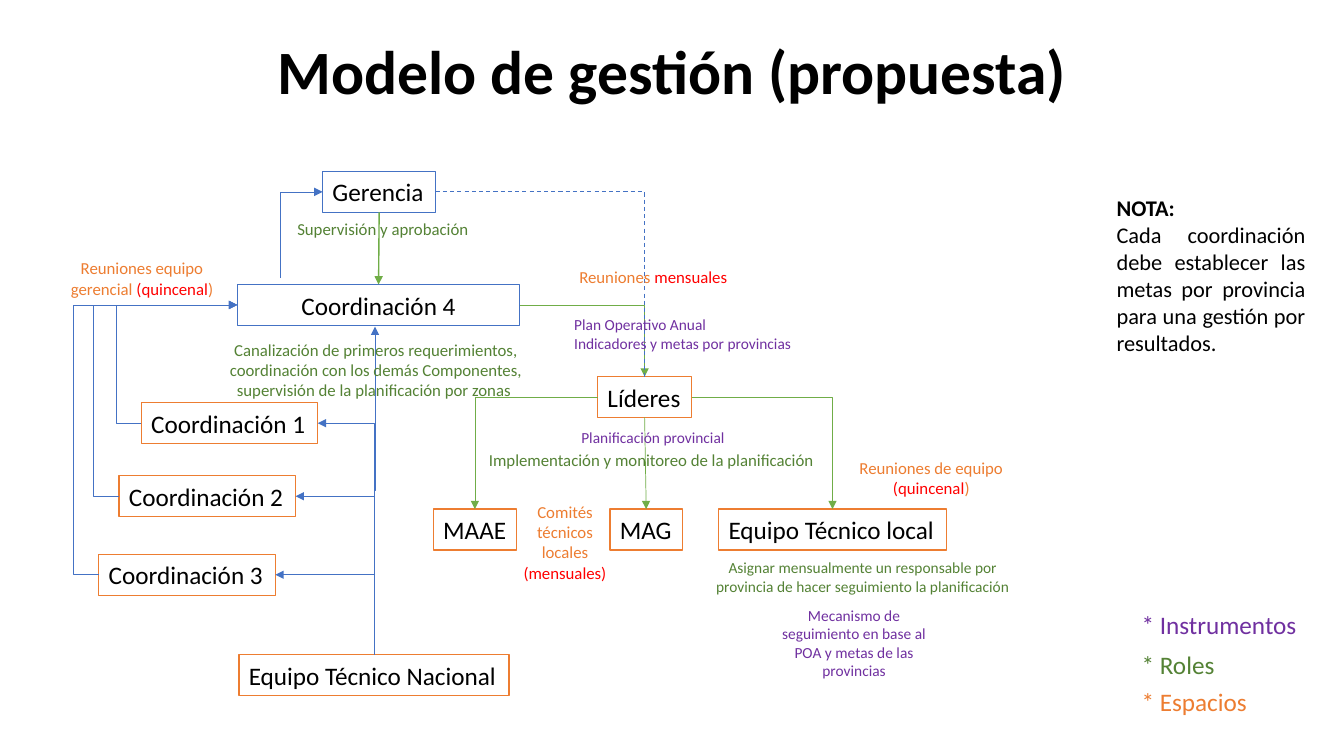
from dataclasses import dataclass

from lxml.etree import SubElement
from pptx import Presentation
from pptx.dml.color import RGBColor
from pptx.enum.dml import MSO_LINE
from pptx.enum.shapes import MSO_CONNECTOR, MSO_SHAPE
from pptx.enum.text import MSO_ANCHOR, MSO_AUTO_SIZE, PP_ALIGN
from pptx.oxml.ns import qn
from pptx.slide import Slide
from pptx.util import Cm, Pt


@dataclass(frozen=True)
class Theme:
    font: str = "Calibri"
    ink: str = "000000"
    paper: str = "FFFFFF"
    blue: str = "4472C4"
    orange: str = "ED7D31"
    arrow_green: str = "70AD47"
    instruments: str = "7030A0"
    roles: str = "548235"
    spaces: str = "ED7D31"
    frequency: str = "FF0000"
    title: int = 44
    heading: int = 18
    note: int = 16
    label: int = 12
    small: int = 11


def left_of(box):
    return box.left, box.top + box.height // 2


def right_of(box):
    return box.left + box.width, box.top + box.height // 2


def top_of(box):
    return box.left + box.width // 2, box.top


def bottom_of(box):
    return box.left + box.width // 2, box.top + box.height


@dataclass
class ModelSlide:
    slide: Slide
    theme: Theme

    def fill_text(self, frame, paragraphs, size, align, wrap, bold=False):
        """Each paragraph is a list of (text, colour) runs."""
        frame.word_wrap = wrap
        frame.auto_size = MSO_AUTO_SIZE.SHAPE_TO_FIT_TEXT
        for index, runs in enumerate(paragraphs):
            paragraph = frame.add_paragraph() if index else frame.paragraphs[0]
            paragraph.alignment = align
            paragraph.font.name = self.theme.font
            paragraph.font.size = Pt(size)
            paragraph.font.bold = bold
            paragraph.font.color.rgb = RGBColor.from_string(runs[0][1])
            for text, color in runs:
                run = paragraph.add_run()
                run.text = text
                if color != runs[0][1]:
                    run.font.color.rgb = RGBColor.from_string(color)

    def label(self, place, paragraphs, size, align=PP_ALIGN.CENTER, wrap=True, bold=False):
        text_box = self.slide.shapes.add_textbox(*map(Cm, place))
        self.fill_text(text_box.text_frame, paragraphs, size, align, wrap, bold)
        return text_box

    def box(self, text, left, top, width, color, align=PP_ALIGN.LEFT, wrap=False):
        shape = self.slide.shapes.add_shape(
            MSO_SHAPE.RECTANGLE, Cm(left), Cm(top), Cm(width), Cm(1.03))
        shape.shadow.inherit = False
        shape.fill.solid()
        shape.fill.fore_color.rgb = RGBColor.from_string(self.theme.paper)
        shape.line.color.rgb = RGBColor.from_string(color)
        shape.line.width = Pt(1)
        self.fill_text(shape.text_frame, [[(text, self.theme.ink)]],
                       self.theme.heading, align, wrap)
        return shape

    def connect(self, start, end, color, width=0.5, kind=MSO_CONNECTOR.STRAIGHT,
                dashed=False):
        line = self.slide.shapes.add_connector(kind, *map(int, (*start, *end)))
        line.line.color.rgb = RGBColor.from_string(color)
        line.line.width = Pt(width)
        if dashed:
            line.line.dash_style = MSO_LINE.DASH
        else:
            outline = line._element.spPr.find(qn("a:ln"))
            SubElement(outline, qn("a:tailEnd"), type="triangle")
        SubElement(line._element.spPr, qn("a:effectLst"))
        return line

    def elbow(self, start, end, color, upright=False, bend=None, **style):
        """One corner, or two with the middle leg at the fraction bend.

        An upright elbow leaves vertically: it is laid flat about its centre
        and turned by 270 degrees.
        """
        (x1, y1), (x2, y2) = start, end
        if upright:
            middle_x, middle_y = (x1 + x2) / 2, (y1 + y2) / 2
            half_x, half_y = (x2 - x1) / 2, (y2 - y1) / 2
            start = middle_x + half_y, middle_y - half_x
            end = middle_x - half_y, middle_y + half_x
        line = self.connect(start, end, color, kind=MSO_CONNECTOR.ELBOW, **style)
        properties = line._element.spPr
        if upright:
            properties.find(qn("a:xfrm")).set("rot", str(270 * 60000))
        geometry = properties.find(qn("a:prstGeom"))
        if bend is None:
            geometry.set("prst", "bentConnector2")
        else:
            SubElement(geometry.find(qn("a:avLst")), qn("a:gd"),
                       name="adj1", fmla=f"val {round(bend * 100000)}")


def draw_structure(page):
    theme = page.theme
    manager = page.box("Gerencia", 8.13, 4.32, 2.85, theme.blue)
    hub = page.box("Coordinación 4", 5.98, 7.17, 7.12, theme.blue, PP_ALIGN.CENTER, True)
    coordinations = [
        page.box(f"Coordinación {number}", left, top, 4.45, theme.orange)
        for number, left, top in ((3, 2.49, 13.97), (2, 3, 11.99), (1, 3.56, 10.15))]
    leaders = page.box("Líderes", 15.06, 9.49, 2.37, theme.orange)
    mag = page.box("MAG", 15.37, 12.83, 1.83, theme.orange)
    national = page.box("Equipo Técnico Nacional", 6.02, 16.5, 6.81, theme.orange)
    local = page.box("Equipo Técnico local", 18.11, 12.83, 5.74, theme.orange)
    maae = page.box("MAAE", 10.92, 12.83, 2.1, theme.orange)

    for coordination in coordinations:
        start, end = left_of(coordination), left_of(hub)
        page.elbow(start, end, theme.blue, bend=-Cm(0.64) / (end[0] - start[0]))
        page.elbow(top_of(national), right_of(coordination), theme.blue, upright=True)
    page.elbow(top_of(national), (Cm(9.45), Cm(8.23)), theme.blue, upright=True, bend=0.5)
    page.elbow((Cm(7.06), Cm(7.01)), left_of(manager), theme.blue, upright=True)

    page.elbow(right_of(hub), top_of(leaders), theme.arrow_green)
    page.elbow(right_of(leaders), top_of(local), theme.arrow_green)
    page.elbow(left_of(leaders), top_of(maae), theme.arrow_green)
    page.connect(bottom_of(leaders), top_of(mag), theme.arrow_green)
    page.connect(bottom_of(manager), top_of(hub), theme.arrow_green, 1)
    page.elbow(right_of(manager), top_of(leaders), theme.blue, width=0.75, dashed=True)


def draw_labels(page):
    theme = page.theme
    left = PP_ALIGN.LEFT
    instruments, roles, spaces = theme.instruments, theme.roles, theme.spaces
    fortnightly = [("(quincenal", theme.frequency), (")", spaces)]

    page.label((7.21, 5.38, 4.88, 0.77), [[("Supervisión y aprobación", roles)]],
               theme.label, wrap=False)
    page.label((5.18, 8.43, 8.59, 1.8), [[(
        "Canalización de primeros requerimientos, coordinación con los demás "
        "Componentes, supervisión de la planificación por zonas ", roles)]], theme.label)
    page.label((12.07, 11.2, 8.76, 0.77),
               [[("Implementación y monitoreo de la planificación", roles)]],
               theme.label, left)
    page.label((17.63, 13.94, 8.23, 1.2), [[(
        "Asignar mensualmente un responsable por provincia de hacer seguimiento "
        "la planificación", roles)]], theme.small)

    page.label((14.4, 10.67, 4.14, 0.73), [[("Planificación provincial", instruments)]],
               theme.small, left, False)
    page.label((14.22, 7.82, 6.12, 1.2),
               [[("Plan Operativo Anual", instruments)],
                [("Indicadores y metas por provincias", instruments)]],
               theme.small, left, False)
    page.label((19.2, 15.14, 4.65, 2.13), [[(
        "Mecanismo de seguimiento en base al POA y metas de las provincias",
        instruments)]], theme.small)

    page.label((1.42, 6.38, 4.32, 1.28),
               [[("Reuniones equipo gerencial ", spaces), *fortnightly]], theme.label)
    page.label((21.31, 11.4, 4.32, 1.28),
               [[("Reuniones de equipo ", spaces), *fortnightly]], theme.label)
    page.label((14.35, 6.6, 4.29, 0.77),
               [[("Reuniones ", spaces), ("mensuales", theme.frequency)]],
               theme.label, left, False)
    page.label((12.88, 12.52, 2.72, 2.31),
               [[("Comités técnicos locales ", spaces), ("(mensuales)", theme.frequency)]],
               theme.label)

    for name, color, top, width in (("Instrumentos", instruments, 15.24, 4.45),
                                    ("Roles", roles, 16.23, 2.36),
                                    ("Espacios", spaces, 17.17, 3.2)):
        page.label((28.52, top, width, 1.03), [[(f"* {name}", color)]],
                   theme.heading, left, False)


def draw_title_and_note(page):
    theme = page.theme
    title = page.label((2.34, 0.03, 29.21, 3.68),
                       [[("Modelo de gestión (propuesta)", theme.ink)]],
                       theme.title, bold=True)
    title.text_frame.auto_size = MSO_AUTO_SIZE.NONE
    title.text_frame.vertical_anchor = MSO_ANCHOR.MIDDLE
    title.text_frame.paragraphs[0].line_spacing = 0.9

    note = page.label((27.89, 4.78, 5.26, 4.37), [[("NOTA:", theme.ink)], [(
        "Cada coordinación debe establecer las metas por provincia para una "
        "gestión por resultados.", theme.ink)]], theme.note, PP_ALIGN.JUSTIFY)
    note.text_frame.paragraphs[0].font.bold = True


def main():
    deck = Presentation()
    deck.slide_width, deck.slide_height = Cm(33.87), Cm(19.05)
    page = ModelSlide(deck.slides.add_slide(deck.slide_layouts[6]), Theme())
    draw_title_and_note(page)
    draw_structure(page)
    draw_labels(page)
    deck.save("out.pptx")


if __name__ == "__main__":
    main()
